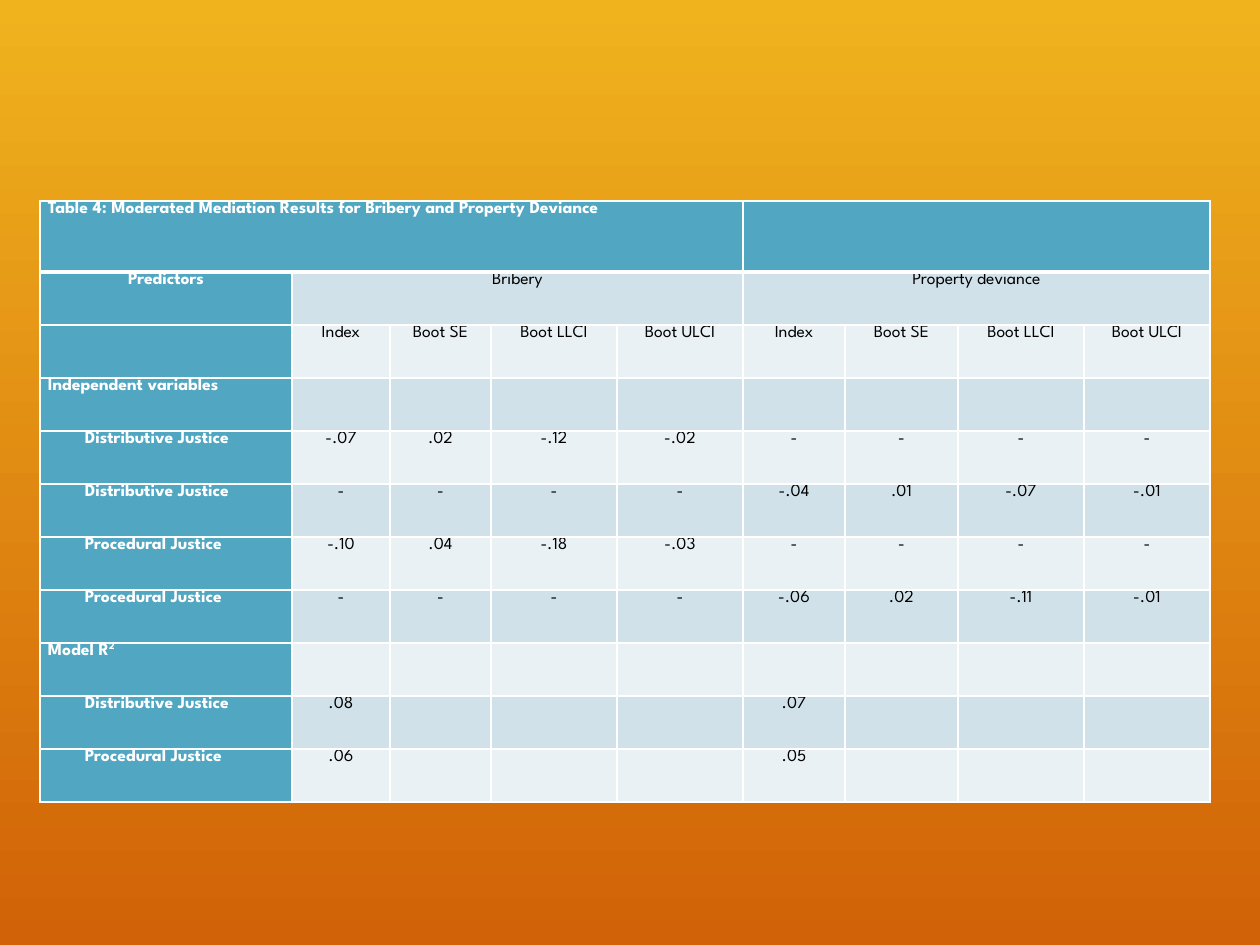
from dataclasses import dataclass

from lxml.etree import SubElement
from pptx import Presentation
from pptx.dml.color import RGBColor as Rgb
from pptx.enum.text import MSO_ANCHOR as Anchor, PP_ALIGN as Align
from pptx.oxml.ns import qn
from pptx.util import Pt

PX = 914400 / 126


def px(length):
    return round(length * PX)


@dataclass(frozen=True)
class Theme:
    font: str = "League Spartan"
    size: int = 10
    sky_top: str = "F0B31E"
    sky_bottom: str = "D16207"
    head: str = "51A6C2"
    band_dark: str = "D0E1E9"
    band_light: str = "E9F1F4"
    rule: str = "FFFFFF"
    head_text: str = "FFFFFF"
    body_text: str = "000000"
    thin: int = 1
    thick: int = 3


THEME = Theme()
COLUMNS = [252, 98, 101, 126, 126, 102, 113, 126, 126]
TITLE_HEIGHT, ROW_HEIGHT = 71, 53
CELL_MARGIN, INDENT = 8, 37
GROUPS = {1: "Bribery", 5: "Property deviance"}
GROUP_SIZE = 4
MEASURES = ["Index", "Boot SE", "Boot LLCI", "Boot ULCI"]
NONE = ["-"] * GROUP_SIZE
BLANK = [""] * GROUP_SIZE
TITLE = "Table 4: Moderated Mediation Results for Bribery and Property Deviance"
SECTIONS = ["Independent variables", "Model R"]
ROWS = [
    ["", *MEASURES, *MEASURES],
    ["Independent variables", *BLANK, *BLANK],
    ["Distributive Justice", "-.07", ".02", "-.12", "-.02", *NONE],
    ["Distributive Justice", *NONE, "-.04", ".01", "-.07", "-.01"],
    ["Procedural Justice", "-.10", ".04", "-.18", "-.03", *NONE],
    ["Procedural Justice", *NONE, "-.06", ".02", "-.11", "-.01"],
    ["Model R", *BLANK, *BLANK],
    ["Distributive Justice", ".08", "", "", "", ".07", "", "", ""],
    ["Procedural Justice", ".06", "", "", "", ".05", "", "", ""],
]


def write(cell, text, color=THEME.body_text, bold=False, align=Align.CENTER,
          indent=0, superscript=""):
    para = cell.text_frame.paragraphs[0]
    para.alignment = align
    if indent:
        properties = para._p.get_or_add_pPr()
        properties.set("marL", str(px(indent)))
        properties.set("indent", "0")
    for part in filter(None, (text, superscript)):
        span = para.add_run()
        span.text = part
        span.font.name = THEME.font
        span.font.size = Pt(THEME.size)
        span.font.bold = bold
        span.font.color.rgb = Rgb.from_string(color)
    if superscript:
        span._r.get_or_add_rPr().set("baseline", "30000")


def write_head(cell, text, **formats):
    write(cell, text, color=THEME.head_text, bold=True, **formats)


def rule_cell(cell, top, bottom):
    """Draw the four cell borders; they must come before the fill in the XML."""
    properties = cell._tc.get_or_add_tcPr()
    widths = {"a:lnL": THEME.thin, "a:lnR": THEME.thin, "a:lnT": top, "a:lnB": bottom}
    for place, (tag, width) in enumerate(widths.items()):
        line = SubElement(properties, qn(tag), w=str(Pt(width)))
        SubElement(SubElement(line, qn("a:solidFill")), qn("a:srgbClr"), val=THEME.rule)
        properties.insert(place, line)


def style_cell(cell, row, column):
    if row == 0 or column == 0:
        color = THEME.head
    else:
        color = THEME.band_dark if row % 2 else THEME.band_light
    cell.fill.solid()
    cell.fill.fore_color.rgb = Rgb.from_string(color)
    cell.margin_left = cell.margin_right = px(CELL_MARGIN)
    cell.margin_top = cell.margin_bottom = 0
    cell.vertical_anchor = Anchor.TOP
    rule_cell(cell,
              top=THEME.thick if row == 1 else THEME.thin,
              bottom=THEME.thick if row == 0 else THEME.thin)


def fill_headings(table):
    last = len(COLUMNS) - 1
    table.cell(0, 0).merge(table.cell(0, GROUP_SIZE))
    table.cell(0, GROUP_SIZE + 1).merge(table.cell(0, last))
    write_head(table.cell(0, 0), TITLE, align=Align.LEFT)
    write_head(table.cell(1, 0), "Predictors")
    for column, group in GROUPS.items():
        table.cell(1, column).merge(table.cell(1, column + GROUP_SIZE - 1))
        write(table.cell(1, column), group)


def fill_rows(table, first_row):
    for row, (label, *values) in enumerate(ROWS, first_row):
        if label:
            write_head(table.cell(row, 0), label, align=Align.LEFT,
                       indent=0 if label in SECTIONS else INDENT,
                       superscript="2" if label == "Model R" else "")
        for column, value in enumerate(values, 1):
            if value:
                write(table.cell(row, column), value)


def add_results_table(page, left, top):
    heights = [TITLE_HEIGHT] + [ROW_HEIGHT] * (len(ROWS) + 1)
    table = page.shapes.add_table(len(heights), len(COLUMNS), px(left), px(top),
                                  px(sum(COLUMNS)), px(sum(heights))).table
    table.first_row = table.horz_banding = False
    for column, width in zip(table.columns, COLUMNS):
        column.width = px(width)
    for row, height in zip(table.rows, heights):
        row.height = px(height)
    for row in range(len(heights)):
        for column in range(len(COLUMNS)):
            style_cell(table.cell(row, column), row, column)
    fill_headings(table)
    fill_rows(table, first_row=2)


def paint_background(page):
    fill = page.background.fill
    fill.gradient()
    fill.gradient_angle = 270
    for stop, color in zip(fill.gradient_stops, (THEME.sky_top, THEME.sky_bottom)):
        stop.color.rgb = Rgb.from_string(color)


def main():
    deck = Presentation()
    deck.slide_width, deck.slide_height = px(1260), px(945)
    page = deck.slides.add_slide(deck.slide_layouts[6])
    paint_background(page)
    add_results_table(page, left=40, top=201)
    deck.save("out.pptx")


if __name__ == "__main__":
    main()
